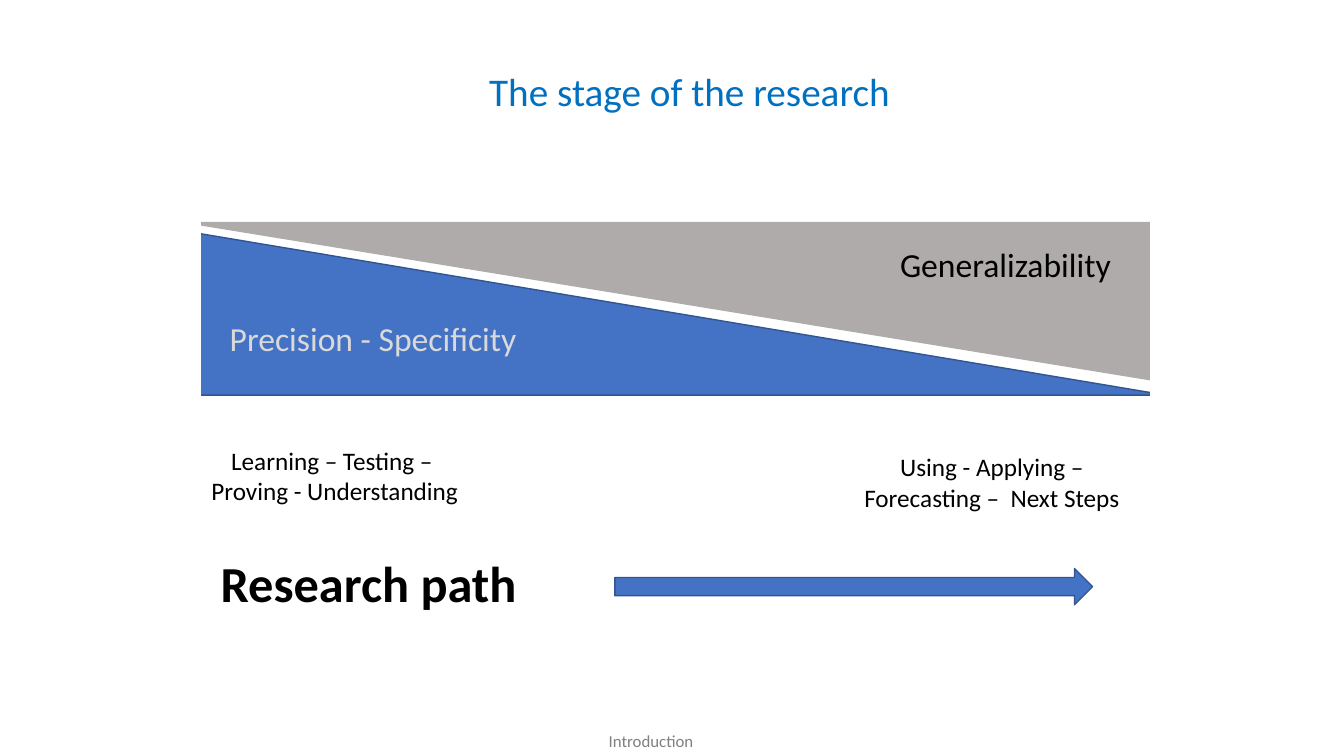
"""Build the slide on the stage of the research."""
from pptx import Presentation
from pptx.dml.color import RGBColor
from pptx.enum import shapes, text
from pptx.util import Pt

BLUE, EDGE, GRAY, WHITE, BLACK = "4472C4", "325491", "AFABAB", "FFFFFF", "000000"
MSO, PP = shapes.MSO_SHAPE, text.PP_ALIGN


def rgb(value):
    return RGBColor.from_string(value)


def write(sp, lines, size, color, align=PP.LEFT, bold=False):
    tf = sp.text_frame
    tf.word_wrap = True
    tf.auto_size = text.MSO_AUTO_SIZE.NONE
    tf.vertical_anchor = text.MSO_ANCHOR.TOP
    for i, line in enumerate(lines):
        p = tf.paragraphs[0] if i == 0 else tf.add_paragraph()
        p.alignment = align
        r = p.add_run()
        r.text = line
        r.font.name = "Calibri"
        r.font.size = Pt(size)
        r.font.bold = bold
        r.font.color.rgb = rgb(color)


prs = Presentation()
prs.slide_width, prs.slide_height = Pt(960), Pt(540)
s = prs.slides.add_slide(prs.slide_layouts[5])

title = s.shapes.title
title.left, title.top, title.width, title.height = Pt(224.6), Pt(44.6), Pt(535.7), Pt(41)
write(title, ["The stage of the research"], 28, "0070C0", PP.CENTER)

diagram = [
    (MSO.RIGHT_TRIANGLE, 126.7, 164.2, 706.3, 118.1, 0, BLUE, EDGE),
    (MSO.RIGHT_TRIANGLE, 126.7, 158.4, 706.3, 115.2, 180, GRAY, None),
    (MSO.RECTANGLE, 95, 126, 48.5, 219.6, 0, WHITE, None),
    (MSO.RECTANGLE, 821.5, 128.9, 48.5, 219.6, 0, WHITE, None),
    (MSO.RIGHT_ARROW, 439.2, 406.1, 341.3, 25.9, 0, BLUE, EDGE),
]
for kind, x, y, w, h, angle, fill, line in diagram:
    sp = s.shapes.add_shape(kind, Pt(x), Pt(y), Pt(w), Pt(h))
    sp.shadow.inherit = False
    sp.rotation = angle
    sp.fill.solid()
    sp.fill.fore_color.rgb = rgb(fill)
    if line:
        sp.line.color.rgb = rgb(line)
        sp.line.width = Pt(1)
    else:
        sp.line.fill.background()

labels = [
    (427.7, 518.4, 146.9, 21.6, ["Introduction"], 12, "808080", PP.LEFT, False),
    (150.5, 391, 576.7, 51.1, ["Research path"], 36, BLACK, PP.LEFT, True),
    (157, 223.2, 234, 36, ["Precision - Specificity"], 24, "D9D9D9", PP.LEFT, False),
    (635.8, 170.6, 172.1, 36, ["Generalizability"], 24, BLACK, PP.LEFT, False),
    (106.6, 314.6, 265, 51.1, ["Learning – Testing – ", "Proving - Understanding"],
     18, BLACK, PP.CENTER, False),
    (593.3, 319, 230.4, 51.1, ["Using - Applying – Forecasting –  Next Steps"],
     18, BLACK, PP.CENTER, False),
]
for x, y, w, h, *content in labels:
    write(s.shapes.add_textbox(Pt(x), Pt(y), Pt(w), Pt(h)), *content)

prs.save("out.pptx")
